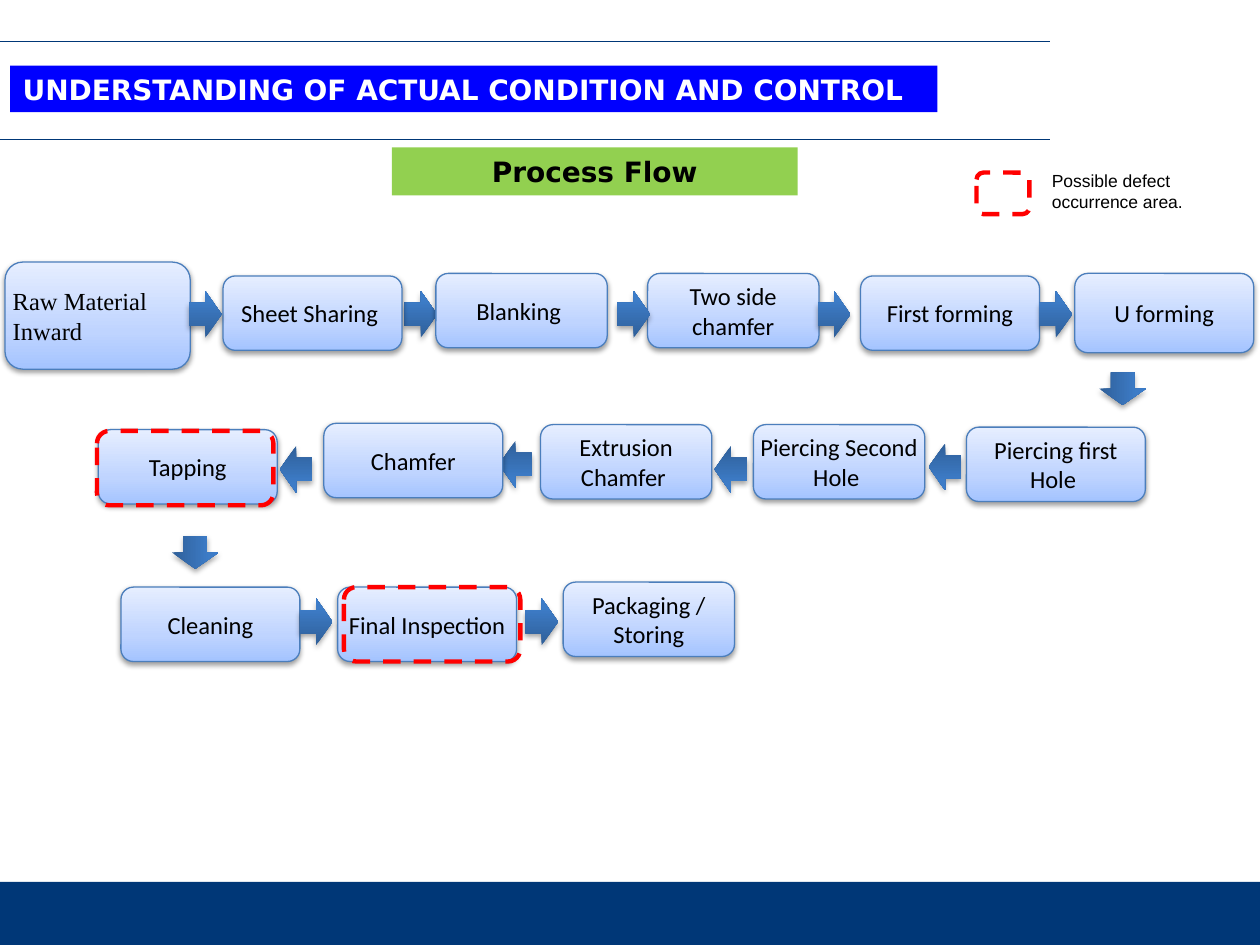
from dataclasses import dataclass

from lxml import etree
from pptx import Presentation
from pptx.dml.color import RGBColor
from pptx.enum import dml, shapes, text
from pptx.oxml import ns
from pptx.util import Inches, Pt

COLORS = {
    "navy": "003777", "blue": "0000FF", "green": "92D050", "red": "FF0000",
    "white": "FFFFFF", "black": "000000", "edge": "4B7EBC",
}
BOX_GRAD = [(0, "A4C4FF"), (35, "BFD4FF"), (100, "E6EEFF")]
ARROW_GRAD = [(0, "2F5F99"), (80, "3D7CC7"), (100, "3A7CCB")]
KIND = shapes.MSO_SHAPE
LEFT, MID = text.PP_ALIGN.LEFT, text.PP_ALIGN.CENTER


@dataclass
class Step:
    label: str
    x: float
    y: float
    w: float = 1.42
    h: float = 0.59
    font: str = "Calibri"
    align: text.PP_ALIGN = MID


@dataclass
class Arrow:
    x: float
    y: float
    turn: int = 0


STEPS = [
    Step("Raw Material Inward", 0.04, 2.08, 1.47, 0.85, "Times New Roman", LEFT),
    Step("Sheet Sharing ", 1.77, 2.19),
    Step("Blanking ", 3.46, 2.17, 1.36),
    Step("Two side chamfer", 5.14, 2.17, 1.36),
    Step("First forming", 6.83, 2.19),
    Step("U forming", 8.53, 2.17, h=0.63),
    Step("Piercing first Hole ", 7.67, 3.39),
    Step("Piercing Second Hole ", 5.98, 3.37, 1.36),
    Step("Extrusion Chamfer ", 4.29, 3.37, 1.36),
    Step("Chamfer", 2.57, 3.36),
    Step("Tapping", 0.78, 3.41),
    Step("Cleaning", 0.96, 4.66),
    Step("Final Inspection", 2.68, 4.66),
    Step("Packaging / Storing", 4.47, 4.62, 1.36),
]
UNDER = [Arrow(3.21, 2.31), Arrow(3.96, 3.5, 180)]
OVER = [
    *(Arrow(x, 2.31) for x in (1.5, 4.9, 6.49, 8.25)),
    Arrow(8.78, 2.9, 90),
    Arrow(7.37, 3.52, 180),
    *(Arrow(x, 3.54, 180) for x in (5.67, 2.22)),
    Arrow(1.42, 4.2, 90),
    *(Arrow(x, 4.75) for x in (2.38, 4.17)),
]
# Dashed frames: the legend key, then the two risky steps
FRAMES = [(7.75, 1.37, 0.42, 0.33), (0.77, 3.42, 1.4, 0.59), (2.73, 4.66, 1.4, 0.59)]


def rgb(name: str) -> RGBColor:
    return RGBColor.from_string(COLORS[name])


def write(shape, words: str, *, size: float, font: str, color: str = "black",
          bold: bool = False, align=LEFT, inset: float | None = None) -> None:
    frame = shape.text_frame
    frame.word_wrap = True
    frame.auto_size = text.MSO_AUTO_SIZE.NONE
    frame.vertical_anchor = text.MSO_ANCHOR.MIDDLE
    if inset is not None:
        frame.margin_left = frame.margin_right = Inches(inset)
        frame.margin_top = frame.margin_bottom = Inches(inset)
    para = frame.paragraphs[0]
    para.alignment = align
    run = para.add_run()
    run.text = words
    run.font.size, run.font.name, run.font.bold = Pt(size), font, bold
    run.font.color.rgb = rgb(color)


def place(shape, x: float, y: float, w: float, h: float) -> None:
    shape.left, shape.top = Inches(x), Inches(y)
    shape.width, shape.height = Inches(w), Inches(h)


def add(slide, kind, x: float, y: float, w: float, h: float,
        fill: str | None = None, line: str | None = None, width: float = 0.75):
    shape = slide.shapes.add_shape(kind, Inches(x), Inches(y), Inches(w), Inches(h))
    shape.shadow.inherit = False
    if fill:
        shape.fill.solid()
        shape.fill.fore_color.rgb = rgb(fill)
    else:
        shape.fill.background()
    if line:
        shape.line.color.rgb = rgb(line)
        shape.line.width = Pt(width)
    else:
        shape.line.fill.background()
    return shape


def tint(node, value: str):
    return etree.SubElement(node, ns.qn("a:srgbClr"), val=value)


def shade(shape, grad: list[tuple[int, str]], alpha: int, drop: float) -> None:
    """Give the shape an upward gradient and a soft shadow below it."""
    shape.fill.gradient()
    shape.fill.gradient_angle = 90
    props = shape._element.spPr
    stops = props.find(".//" + ns.qn("a:gsLst"))
    for stop in list(stops):
        stops.remove(stop)
    for pos, value in grad:
        tint(etree.SubElement(stops, ns.qn("a:gs"), pos=str(pos * 1000)), value)
    cast = etree.SubElement(
        props.find(ns.qn("a:effectLst")), ns.qn("a:outerShdw"), blurRad=str(Pt(3.1)),
        dist=str(Pt(drop)), dir="5400000", rotWithShape="0")
    etree.SubElement(tint(cast, COLORS["black"]), ns.qn("a:alpha"), val=str(alpha * 1000))


def draw_step(slide, step: Step) -> None:
    box = add(slide, KIND.ROUNDED_RECTANGLE, step.x, step.y, step.w, step.h, line="edge")
    shade(box, BOX_GRAD, 38, 1.6)
    write(box, step.label, size=14, font=step.font, align=step.align, inset=0.02)


def draw_arrow(slide, arrow: Arrow) -> None:
    shape = add(slide, KIND.RIGHT_ARROW, arrow.x, arrow.y, 0.26, 0.37)
    shape.rotation = arrow.turn
    shade(shape, ARROW_GRAD, 35, 1.8)


def draw_rule(slide, y: float) -> None:
    rule = slide.shapes.add_connector(
        shapes.MSO_CONNECTOR.STRAIGHT, 0, Inches(y), Inches(8.33), Inches(y))
    rule.line.color.rgb = rgb("navy")
    rule.line.width = Pt(0.75)
    etree.SubElement(rule._element.spPr, ns.qn("a:effectLst"))


def main() -> None:
    deck = Presentation()
    deck.slide_width, deck.slide_height = Inches(10), Inches(7.5)
    slide = deck.slides.add_slide(deck.slide_layouts[5])

    add(slide, KIND.RECTANGLE, 0, 7, 10, 0.5, fill="navy")
    for y in (0.33, 1.11):
        draw_rule(slide, y)

    title = slide.shapes.title
    place(title, 0.08, 0.52, 7.36, 0.37)
    title.fill.solid()
    title.fill.fore_color.rgb = rgb("blue")
    write(title, "UNDERSTANDING OF ACTUAL CONDITION AND CONTROL",
          size=16, font="DejaVu Sans", color="white", bold=True)

    head = add(slide, KIND.RECTANGLE, 3.11, 1.17, 3.22, 0.38, fill="green")
    write(head, "Process Flow", size=16, font="DejaVu Sans", bold=True, align=MID)
    note = slide.shapes.add_textbox(Inches(8.25), Inches(1.3), Inches(1.33), Inches(0.44))
    write(note, "Possible defect occurrence area.", size=10, font="Arial")

    for arrow in UNDER:
        draw_arrow(slide, arrow)
    for step in STEPS:
        draw_step(slide, step)
    for arrow in OVER:
        draw_arrow(slide, arrow)
    for area in FRAMES:
        frame = add(slide, KIND.ROUNDED_RECTANGLE, *area, line="red", width=2.5)
        frame.line.dash_style = dml.MSO_LINE.DASH

    deck.save("out.pptx")


if __name__ == "__main__":
    main()
